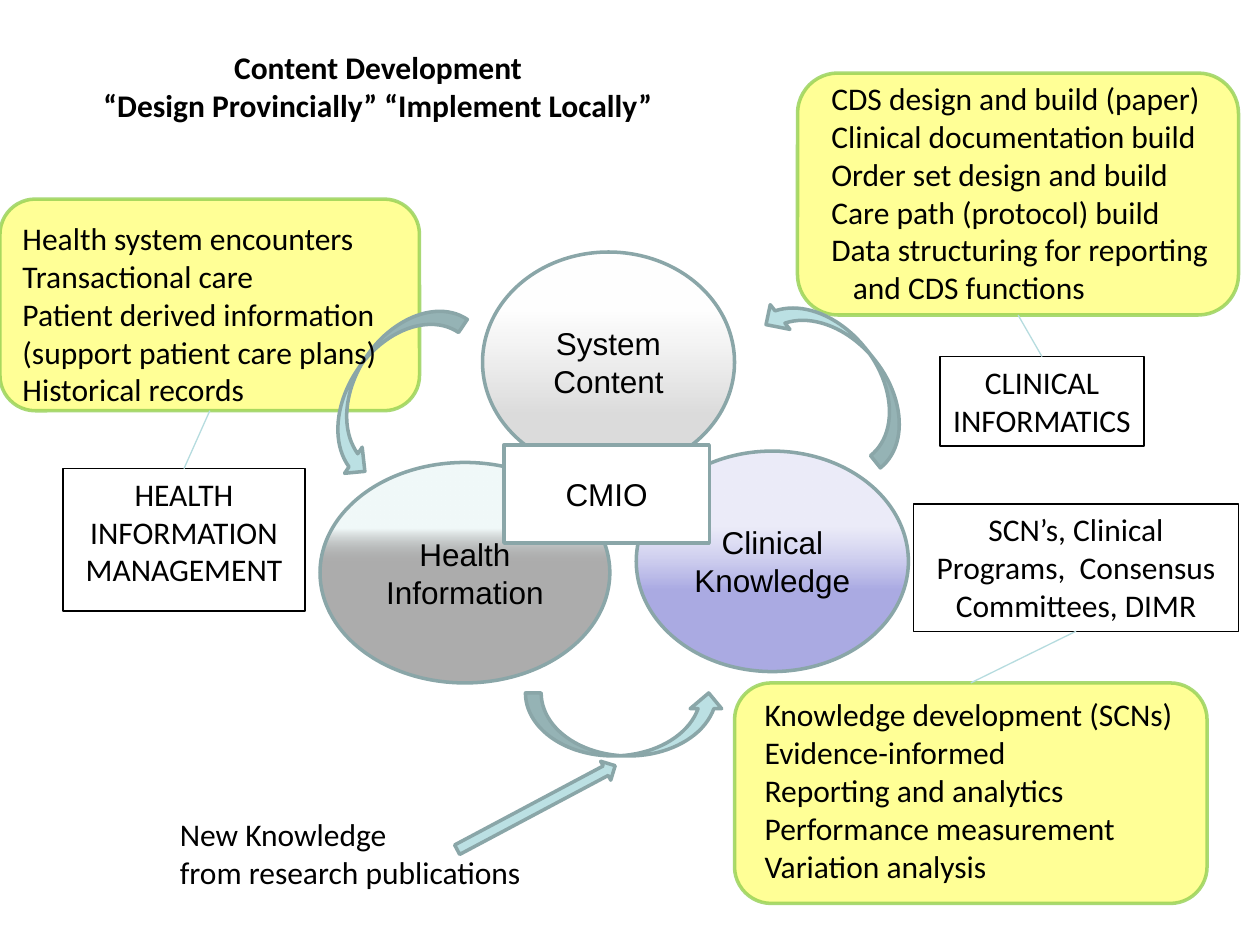
from dataclasses import dataclass

from lxml import etree
from pptx import Presentation
from pptx.dml.color import RGBColor
from pptx.enum import shapes, text
from pptx.oxml.ns import qn
from pptx import util as u

PX = 9144  # one px is a hundredth of an inch
BLACK, WHITE = "000000", "FFFFFF"
EDGE, ARROW, LINK = "8AA6A8", "BBE0E3", "B6DCDF"
CARD_FILL, CARD_EDGE = "FFFF00", "92D050"
SHAPE = shapes.MSO_SHAPE
CENTER, LEFT = text.PP_ALIGN.CENTER, text.PP_ALIGN.LEFT
TOP_SIDE, BOTTOM_SIDE = 0, 2


@dataclass
class Area:
    left: int
    top: int
    width: int
    height: int

    def emu(self) -> list[int]:
        return [v * PX for v in (self.left, self.top, self.width, self.height)]


@dataclass
class Topic:
    """A yellow card, its framed label and the sides their link joins."""
    card: Area
    label: Area
    lines: list[str]
    label_side: int
    card_side: int
    wrap: bool = True


@dataclass
class Domain:
    area: Area
    name: str
    stops: list[tuple[float, str, int]]  # position, colour, opacity %


@dataclass
class Arrow:
    kind: int
    area: Area
    angle: float = 0


@dataclass
class Note:
    area: Area
    lines: list[str]
    align: int = LEFT
    bold: bool = False
    wrap: bool = True
    hang: int = 0


def rgb(value: str) -> RGBColor:
    return RGBColor.from_string(value)


def set_opacity(properties, percent: int) -> None:
    """Give every solid colour below the element an opacity."""
    for colour in properties.iter(qn("a:srgbClr")):
        etree.SubElement(colour, qn("a:alpha")).set("val", str(percent * 1000))


def write(box, lines: list[str], *, font="Calibri", align=CENTER, bold=False,
          wrap=True, anchor=text.MSO_ANCHOR.TOP, hang=0) -> None:
    frame = box.text_frame
    frame.word_wrap = wrap
    frame.vertical_anchor = anchor
    for index, line in enumerate(lines):
        para = frame.paragraphs[0] if index == 0 else frame.add_paragraph()
        para.text = line
        para.alignment = align
        if hang and "\v" in line:
            layout = para._p.get_or_add_pPr()
            layout.set("marL", str(hang * PX))
            layout.set("indent", str(-hang * PX))
        for span in para.runs:
            span.font.name = font
            span.font.size = u.Pt(18)
            span.font.bold = bold
            span.font.color.rgb = rgb(BLACK)


def add_shape(page, kind: int, area: Area, *, fill=None, line=EDGE, weight=2.0):
    box = page.shapes.add_shape(kind, *area.emu())
    box.shadow.inherit = False
    if fill:
        box.fill.solid()
        box.fill.fore_color.rgb = rgb(fill)
    else:
        box.fill.background()
    box.line.color.rgb = rgb(line)
    box.line.width = u.Pt(weight)
    return box


def add_topic(page, topic: Topic) -> None:
    card = add_shape(page, SHAPE.ROUNDED_RECTANGLE, topic.card,
                     fill=CARD_FILL, line=CARD_EDGE)
    set_opacity(card.fill._xPr.find(qn("a:solidFill")), 41)
    set_opacity(card.line._ln, 79)
    label = add_shape(page, SHAPE.RECTANGLE, topic.label, line=BLACK, weight=0.75)
    write(label, topic.lines, wrap=topic.wrap)

    link = page.shapes.add_connector(shapes.MSO_CONNECTOR.STRAIGHT, 0, 0, 0, 0)
    link.begin_connect(label, topic.label_side)
    link.end_connect(card, topic.card_side)
    link.line.color.rgb = rgb(LINK)
    link.line.width = u.Pt(0.75)
    etree.SubElement(link._element.spPr, qn("a:effectLst"))


def add_domain(page, domain: Domain) -> None:
    oval = add_shape(page, SHAPE.OVAL, domain.area)
    oval.fill.gradient()
    oval.fill.gradient_angle = 270
    for stop, (position, colour, opacity) in zip(oval.fill.gradient_stops, domain.stops):
        stop.position = position
        stop.color.rgb = rgb(colour)
        set_opacity(stop._gs, opacity)
    write(oval, [domain.name], font="Arial", anchor=text.MSO_ANCHOR.MIDDLE)


def add_arrow(page, arrow: Arrow) -> None:
    add_shape(page, arrow.kind, arrow.area, fill=ARROW).rotation = arrow.angle


def add_note(page, note: Note) -> None:
    box = page.shapes.add_textbox(*note.area.emu())
    write(box, note.lines, align=note.align, bold=note.bold, wrap=note.wrap,
          hang=note.hang)


TOPICS = [
    Topic(Area(583, 542, 375, 175), Area(725, 400, 258, 101),
          ["SCN’s, Clinical Programs,  Consensus Committees, DIMR"],
          BOTTOM_SIDE, TOP_SIDE),
    Topic(Area(633, 58, 350, 192), Area(746, 283, 162, 71),
          ["CLINICAL", "INFORMATICS"], TOP_SIDE, BOTTOM_SIDE, wrap=False),
    Topic(Area(0, 158, 333, 168), Area(50, 372, 192, 113),
          ["HEALTH INFORMATION MANAGEMENT"], TOP_SIDE, BOTTOM_SIDE),
]
DOMAINS = [
    Domain(Area(254, 367, 230, 175), "Health Information",
           [(0.30, "F1F9F9", 100), (0.45, "666666", 53)]),
    Domain(Area(383, 200, 200, 175), "System Content",
           [(0.26, "FFFFFF", 49), (0.73, "BFBFBF", 54)]),
    Domain(Area(505, 358, 216, 175), "Clinical Knowledge",
           [(0.34, "CECEEF", 38), (0.63, "6B6BCF", 57)]),
]
ARROWS = [
    Arrow(SHAPE.CURVED_UP_ARROW, Area(417, 550, 158, 50)),
    Arrow(SHAPE.CURVED_UP_ARROW, Area(590, 269, 158, 50), 231.4),
    Arrow(SHAPE.CURVED_UP_ARROW, Area(227, 280, 158, 50), 124),
    Arrow(SHAPE.DOWN_ARROW, Area(417, 570, 17, 142), 242),
]
NOTES = [
    Note(Area(597, 547, 349, 162),
         ["Knowledge development (SCNs)", "Evidence-informed",
          "Reporting and analytics", "Performance measurement",
          "Variation analysis"], wrap=False),
    Note(Area(133, 642, 294, 71),
         ["New Knowledge", "from research publications"], wrap=False),
    Note(Area(650, 58, 350, 192),
         ["CDS design and build (paper)", "Clinical documentation build",
          "Order set design and build", "Care path (protocol) build",
          "Data structuring for reporting\vand CDS functions"], hang=17),
    Note(Area(8, 169, 375, 162),
         ["Health system encounters", "Transactional care",
          "Patient derived information (support patient care plans)",
          "Historical records"]),
    Note(Area(54, 33, 492, 71),
         ["Content Development", "“Design Provincially” “Implement Locally”"],
         align=CENTER, bold=True),
]


def main() -> None:
    deck = Presentation()
    deck.slide_width, deck.slide_height = 1000 * PX, 750 * PX
    page = deck.slides.add_slide(deck.slide_layouts[6])

    # Cards with labels, then the three domains and the cycle around them
    for topic in TOPICS:
        add_topic(page, topic)
    for domain in DOMAINS:
        add_domain(page, domain)
    for arrow in ARROWS:
        add_arrow(page, arrow)
    for note in NOTES:
        add_note(page, note)

    # Centre box over the domains
    centre = add_shape(page, SHAPE.RECTANGLE, Area(400, 353, 163, 78), fill=WHITE)
    write(centre, ["CMIO"], font="Arial", anchor=text.MSO_ANCHOR.MIDDLE)

    deck.save("out.pptx")


if __name__ == "__main__":
    main()
